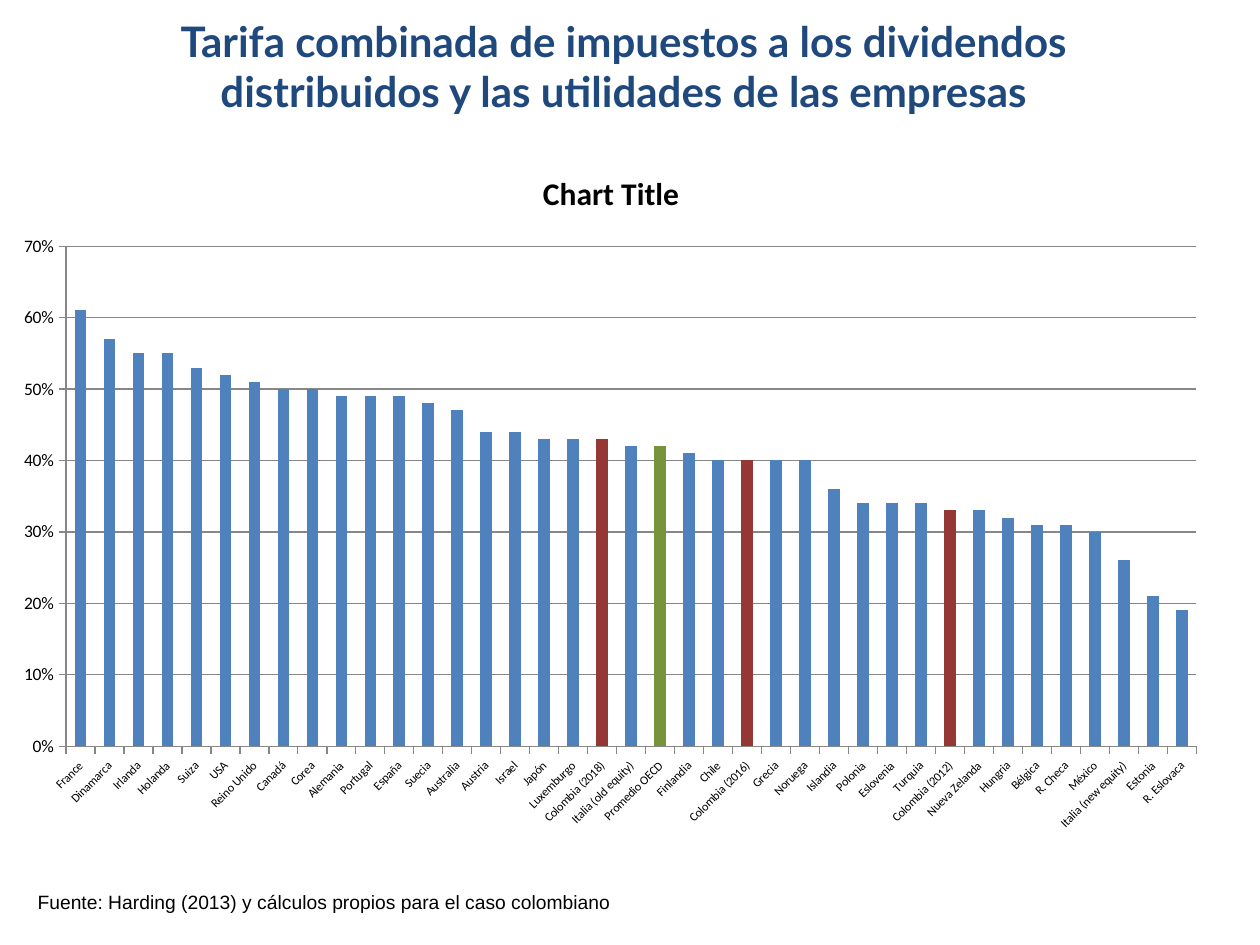
from lxml import etree
from pptx import Presentation
from pptx.chart.data import CategoryChartData as Data
from pptx.dml.color import RGBColor
from pptx.enum.chart import XL_CHART_TYPE as Kind, XL_TICK_MARK as Tick
from pptx.enum.text import MSO_ANCHOR as Anchor, PP_ALIGN as Align
from pptx.oxml.ns import qn
from pptx.util import Inches, Pt

NAVY = RGBColor(0x1F, 0x49, 0x7D)
BLACK = RGBColor(0, 0, 0)
BLUE = RGBColor(0x4F, 0x81, 0xBD)
RED = RGBColor(0x95, 0x37, 0x35)
GREEN = RGBColor(0x77, 0x93, 0x3C)
GRAY = RGBColor(0x87, 0x87, 0x87)

TITLE = ("Tarifa combinada de impuestos a los dividendos "
         "distribuidos y las utilidades de las empresas")
SOURCE = "Fuente: Harding (2013) y cálculos propios para el caso colombiano"
RATES = [
    ("France", 61), ("Dinamarca", 57), ("Irlanda", 55), ("Holanda", 55),
    ("Suiza", 53), ("USA", 52), ("Reino Unido", 51), ("Canadá", 50),
    ("Corea", 50), ("Alemania", 49), ("Portugal", 49), ("España", 49),
    ("Suecia", 48), ("Australia", 47), ("Austria", 44), ("Israel", 44),
    ("Japón", 43), ("Luxemburgo", 43), ("Colombia (2018)", 43),
    ("Italia (old equity)", 42), ("Promedio OECD", 42), ("Finlandia", 41),
    ("Chile", 40), ("Colombia (2016)", 40), ("Grecia", 40), ("Noruega", 40),
    ("Islandia", 36), ("Polonia", 34), ("Eslovenia", 34), ("Turquia", 34),
    ("Colombia (2012)", 33), ("Nueva Zelanda", 33), ("Hungria", 32),
    ("Bélgica", 31), ("R. Checa", 31), ("México", 30),
    ("Italia (new equity)", 26), ("Estonia", 21), ("R. Eslovaca", 19),
]
MARKS = {"Colombia": RED, "Promedio": GREEN}
PLOT = {"x": 0.054, "y": 0.145, "w": 0.925, "h": 0.715}


def style(font, size, color=BLACK, face="Calibri", bold=False):
    looks = {"size": Pt(size), "name": face, "bold": bold}
    for key, val in looks.items():
        setattr(font, key, val)
    font.color.rgb = color


def write(slide, text, area, align, **look):
    frame = slide.shapes.add_textbox(*map(Inches, area)).text_frame
    frame.word_wrap = True
    frame.vertical_anchor = Anchor.MIDDLE
    par = frame.paragraphs[0]
    par.alignment = align
    run = par.add_run()
    run.text = text
    style(run.font, **look)


def place(chart):
    area = chart._chartSpace.chart.plotArea
    for old in area.findall(qn("c:layout")):
        area.remove(old)
    outer = etree.Element(qn("c:layout"))
    area.insert(0, outer)
    inner = etree.SubElement(outer, qn("c:manualLayout"))
    rules = {"layoutTarget": "inner", "xMode": "edge", "yMode": "edge", **PLOT}
    for tag, val in rules.items():
        etree.SubElement(inner, qn("c:" + tag)).set("val", str(val))


def draw(slide, area):
    data = Data(number_format="0%")
    data.categories = [name for name, rate in RATES]
    data.add_series("Series 1", [rate / 100 for name, rate in RATES])
    chart = slide.shapes.add_chart(
        Kind.COLUMN_CLUSTERED, *map(Inches, area), data).chart
    style(chart.font, 10)
    chart.has_legend = False
    chart.has_title = True
    head = chart.chart_title.text_frame
    head.text = "Chart Title"
    style(head.paragraphs[0].runs[0].font, 18, bold=True)
    place(chart)

    plot = chart.plots[0]
    plot.vary_by_categories = False
    plot.gap_width = 150
    bars = plot.series[0]
    bars.format.fill.solid()
    bars.format.fill.fore_color.rgb = BLUE
    for i, (name, rate) in enumerate(RATES):
        color = MARKS.get(name.split()[0])
        if color:
            fill = bars.points[i].format.fill
            fill.solid()
            fill.fore_color.rgb = color

    cats, vals = chart.category_axis, chart.value_axis
    scale = {"minimum_scale": 0, "maximum_scale": 0.7, "major_unit": 0.1,
             "has_major_gridlines": True}
    for key, val in scale.items():
        setattr(vals, key, val)
    vals.tick_labels.number_format = "0%"
    vals.tick_labels.number_format_is_linked = False
    for axis, size in ((cats, 7), (vals, 10)):
        axis.major_tick_mark = Tick.OUTSIDE
        axis.minor_tick_mark = Tick.NONE
        style(axis.tick_labels.font, size)
    for part in (cats, vals, vals.major_gridlines):
        part.format.line.color.rgb = GRAY
        part.format.line.width = Pt(0.75)
    cats._element.find(qn("c:txPr")).find(qn("a:bodyPr")).set("rot", "-2700000")


def main():
    deck = Presentation()
    deck.slide_width, deck.slide_height = Inches(10), Inches(7.5)
    slide = deck.slides.add_slide(deck.slide_layouts[6])
    write(slide, TITLE, (0.45, 0.12, 9, 0.8), Align.CENTER,
          size=24, color=NAVY, face="Lato", bold=True)
    draw(slide, (0, 1.15, 9.7, 5.55))
    write(slide, SOURCE, (0.2, 7.01, 9.5, 0.29), Align.LEFT,
          size=11, face="Arial")
    deck.save("out.pptx")


if __name__ == "__main__":
    main()
